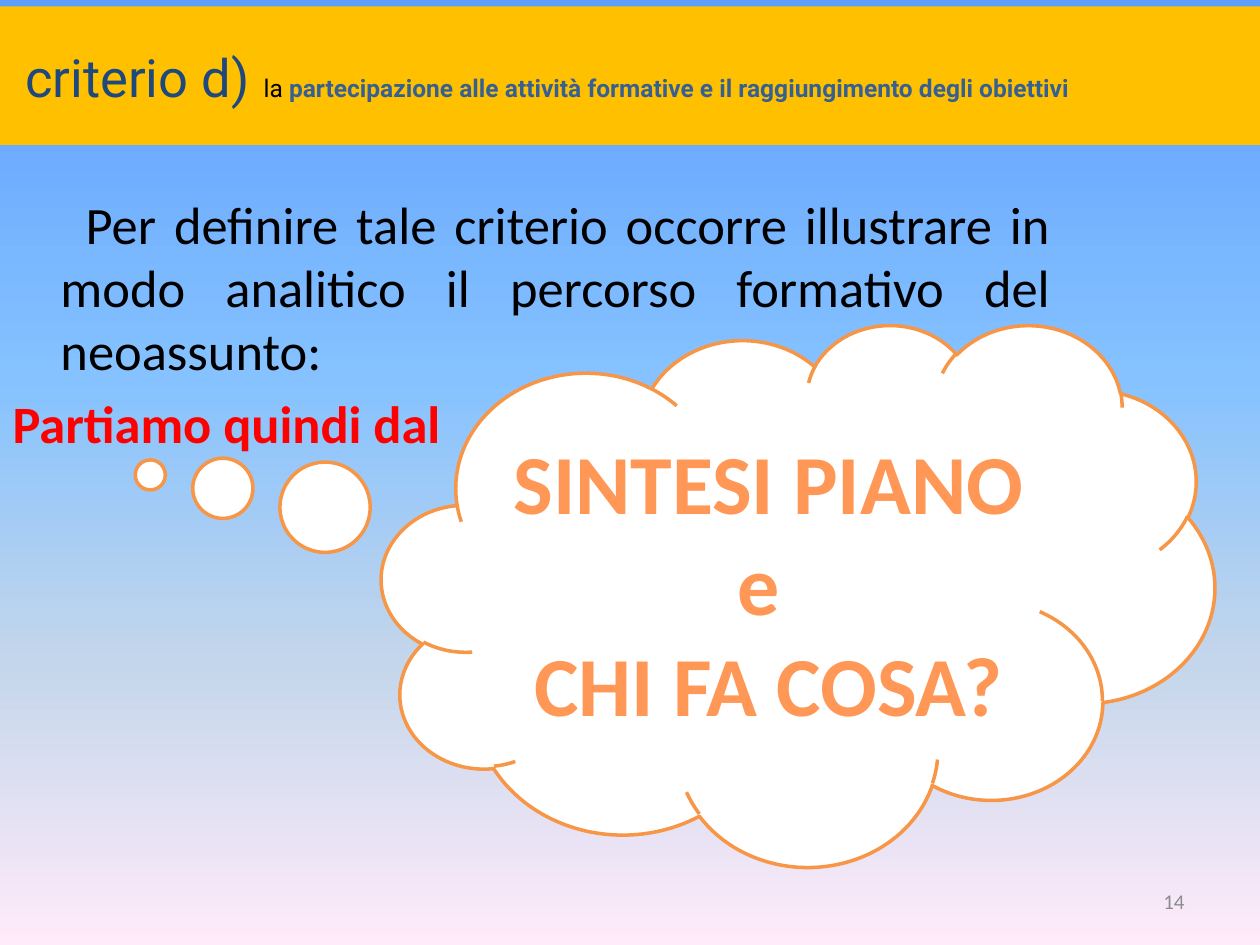
from lxml import etree
from pptx import Presentation
from pptx.dml.color import RGBColor
from pptx.enum.shapes import MSO_SHAPE
from pptx.enum.text import MSO_ANCHOR, MSO_AUTO_SIZE, PP_ALIGN
from pptx.oxml.ns import qn
from pptx.util import Inches, Pt

CLOUD = MSO_SHAPE.CLOUD_CALLOUT
MIDDLE = MSO_ANCHOR.MIDDLE
NO_AUTOFIT = MSO_AUTO_SIZE.NONE
LEFT, CENTER, RIGHT, JUSTIFY = PP_ALIGN.LEFT, PP_ALIGN.CENTER, PP_ALIGN.RIGHT, PP_ALIGN.JUSTIFY

BLACK = RGBColor(0x00, 0x00, 0x00)
WHITE = RGBColor(0xFF, 0xFF, 0xFF)
RED = RGBColor(0xFF, 0x00, 0x00)
GOLD = RGBColor(0xFF, 0xC0, 0x00)
NAVY = RGBColor(0x1F, 0x49, 0x7D)
BLUE = RGBColor(0x37, 0x60, 0x92)
ORANGE = RGBColor(0xF7, 0x96, 0x46)
GRAY = RGBColor(0x8C, 0x8C, 0x8C)
SKY = [
    (0, RGBColor(0x5E, 0x9E, 0xFF)),
    (40, RGBColor(0x85, 0xC2, 0xFF)),
    (70, RGBColor(0xC4, 0xD6, 0xEB)),
    (100, RGBColor(0xFF, 0xEB, 0xFA)),
]
EMBER = [
    (0, RGBColor(0x9D, 0x47, 0x00)),
    (78, RGBColor(0xFF, 0x98, 0x56)),
    (100, RGBColor(0xFF, 0xF5, 0xF1)),
]


class SlideBuilder:
    body_font = "Calibri"
    title_font = "Roboto"

    def __init__(self, presentation):
        self.slide = presentation.slides.add_slide(presentation.slide_layouts[1])

    def place(self, shape, left, top, width, height):
        shape.left, shape.top = Inches(left), Inches(top)
        shape.width, shape.height = Inches(width), Inches(height)

    def gradient(self, fill, owner, stops):
        fill.gradient()
        fill.gradient_angle = 270
        stop_list = next(owner.iter(qn("a:gsLst")))
        for old_stop in list(stop_list):
            stop_list.remove(old_stop)
        for position, color in stops:
            stop = etree.SubElement(stop_list, qn("a:gs"), pos=str(position * 1000))
            etree.SubElement(stop, qn("a:srgbClr"), val=str(color))

    def background(self, stops):
        self.gradient(self.slide.background.fill, self.slide.element, stops)

    def style(self, paragraph, size, color=None, bold=False, align=LEFT):
        paragraph.alignment = align
        font = paragraph.font
        font.name, font.size, font.bold = self.body_font, Pt(size), bold
        if color is not None:
            font.color.rgb = color

    def title(self, box, runs):
        shape = self.slide.shapes.title
        self.place(shape, *box)
        shape.fill.solid()
        shape.fill.fore_color.rgb = GOLD
        frame = shape.text_frame
        frame.auto_size = NO_AUTOFIT
        frame.vertical_anchor = MIDDLE
        frame.margin_left = Inches(0.2)
        paragraph = frame.paragraphs[0]
        paragraph.alignment = LEFT
        paragraph.font.name = self.title_font
        for text, size, color, bold in runs:
            run = paragraph.add_run()
            run.text = text
            run.font.size, run.font.bold = Pt(size), bold
            run.font.color.rgb = color

    def body(self, box, items):
        shape = self.slide.placeholders[1]
        self.place(shape, *box)
        frame = shape.text_frame
        frame.auto_size = NO_AUTOFIT
        frame.text = "\n".join(item[0] for item in items)
        for paragraph, (_, color, bold, indent) in zip(frame.paragraphs, items):
            self.style(paragraph, 30, color, bold, JUSTIFY)
            paragraph.space_before = Pt(6)
            properties = paragraph._p.get_or_add_pPr()
            properties.set("marL", str(Inches(0.38)))
            properties.set("indent", str(Inches(indent)))
            properties.insert_element_before(
                properties.makeelement(qn("a:buNone")), "a:tabLst", "a:defRPr", "a:extLst"
            )

    def cloud(self, box, tail, lines):
        shape = self.slide.shapes.add_shape(CLOUD, *map(Inches, box))
        shape.adjustments[0], shape.adjustments[1] = tail
        shape.shadow.inherit = False
        shape.fill.solid()
        shape.fill.fore_color.rgb = WHITE
        shape.line.color.rgb = ORANGE
        shape.line.width = Pt(2)
        frame = shape.text_frame
        frame.word_wrap = True
        frame.text = "\n".join(lines)
        for paragraph in frame.paragraphs:
            self.style(paragraph, 48, bold=True, align=CENTER)
            self.gradient(paragraph.font.fill, paragraph._p, EMBER)

    def page_number(self, box, text):
        frame = self.slide.shapes.add_textbox(*map(Inches, box)).text_frame
        frame.word_wrap = True
        frame.vertical_anchor = MIDDLE
        frame.text = text
        self.style(frame.paragraphs[0], 12, GRAY, align=RIGHT)


def main():
    presentation = Presentation()
    presentation.slide_width, presentation.slide_height = Inches(10), Inches(7.5)
    builder = SlideBuilder(presentation)
    builder.background(SKY)
    builder.title((0, 0.05, 10, 1.1), [
        ("criterio d)", 30, NAVY, False),
        (" ", 32, BLACK, False),
        ("la ", 14, BLACK, False),
        ("partecipazione alle attività formative e il raggiungimento degli obiettivi", 14, BLUE, True),
    ])
    builder.body((0, 1.47, 8.44, 5.15), [
        ("Per definire tale criterio occorre illustrare in modo analitico "
         "il percorso formativo del neoassunto:", BLACK, False, 0.2),
        ("Partiamo quindi dal", RED, True, -0.38),
    ])
    builder.page_number((7.17, 6.95, 2.33, 0.4), "14")
    builder.cloud((3.03, 2.57, 6.61, 4.3), (-0.778, -0.221),
                  ["SINTESI PIANO e ", "CHI FA COSA?"])
    presentation.save("out.pptx")


if __name__ == "__main__":
    main()
